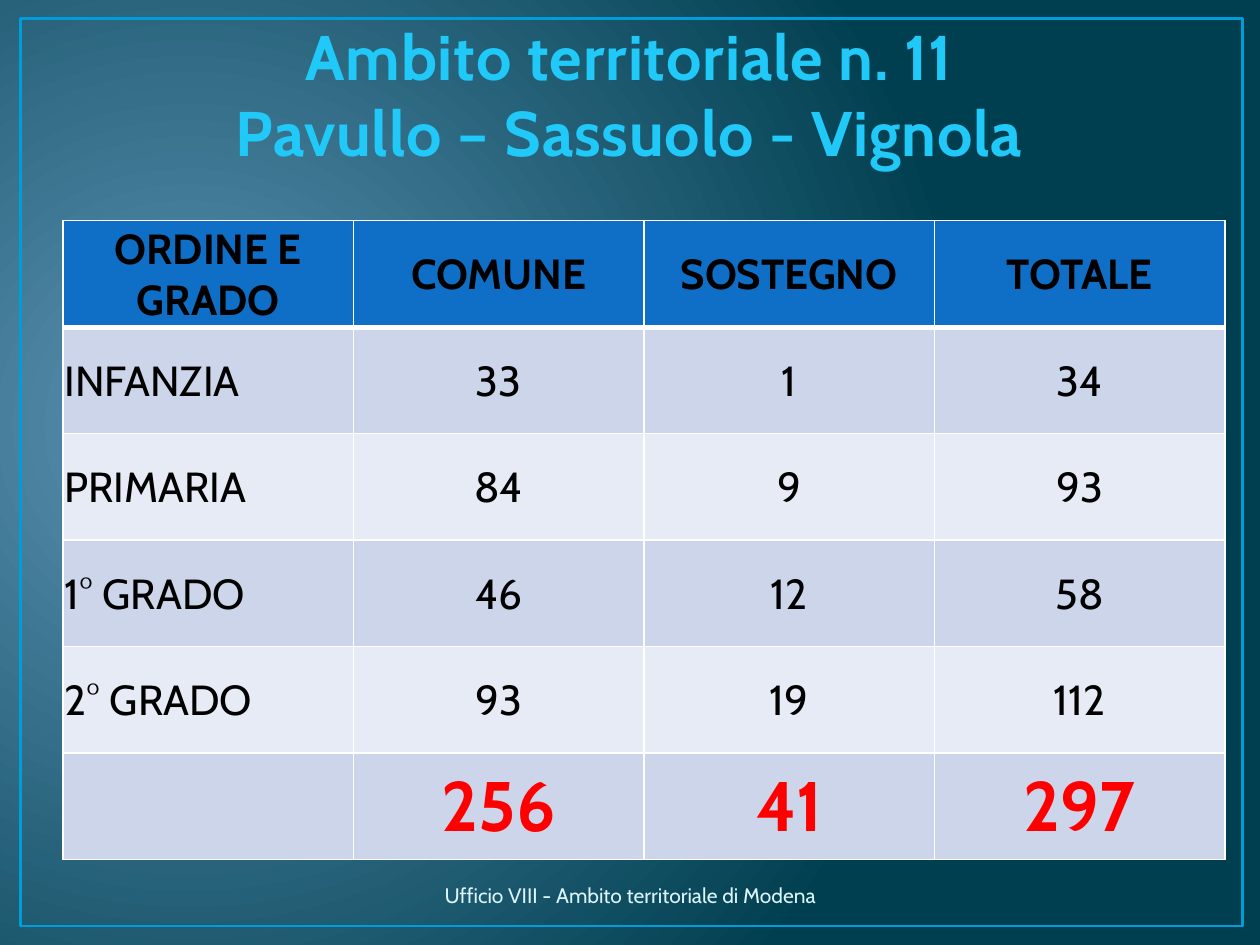
from lxml import etree
from pptx import Presentation
from pptx.dml.color import RGBColor
from pptx.enum import shapes, text
from pptx.oxml.ns import qn
from pptx.util import Cm, Pt

FONT = "Cabin"
BG_LIGHT = RGBColor(0x5C, 0x92, 0xB3)
BG_DARK = RGBColor(0x00, 0x3F, 0x50)
FRAME = RGBColor(0x00, 0x9D, 0xD9)
TITLE = RGBColor(0x20, 0xC9, 0xF8)
TITLE_EDGE = RGBColor(0x08, 0x37, 0x63)
HEADER = RGBColor(0x0F, 0x6F, 0xC6)
BAND_DARK = RGBColor(0xCC, 0xD5, 0xEA)
BAND_LIGHT = RGBColor(0xE7, 0xEB, 0xF5)
FOOTER = RGBColor(0xDB, 0xF5, 0xF9)
BLACK = RGBColor(0, 0, 0)
WHITE = RGBColor(0xFF, 0xFF, 0xFF)
RED = RGBColor(0xFF, 0, 0)

ROWS = [
    ["ORDINE E GRADO", "COMUNE", "SOSTEGNO", "TOTALE"],
    ["INFANZIA", "33", "1", "34"],
    ["PRIMARIA", "84", "9", "93"],
    ["1° GRADO", "46", "12", "58"],
    ["2° GRADO", "93", "19", "112"],
    ["", "256", "41", "297"],
]


def add_run(p, content, size, color, bold=False):
    r = p.add_run()
    r.text = content
    r.font.name = FONT
    r.font.size = Pt(size)
    r.font.bold = bold
    r.font.color.rgb = color
    return r


def make_line(tag, color, width):
    ln = etree.Element(qn(tag), w=str(Pt(width)))
    fill = etree.SubElement(ln, qn("a:solidFill"))
    etree.SubElement(fill, qn("a:srgbClr"), val=str(color))
    return ln


def set_background(s):
    fill = s.background.fill
    fill.gradient()
    for stop, color, position in zip(fill.gradient_stops, (BG_LIGHT, BG_DARK), (0, 1)):
        stop.color.rgb = color
        stop.position = position
    # Circular gradient instead of the linear one
    lin = next(s.background._cSld.iter(qn("a:lin")))
    circle = etree.Element(qn("a:path"), path="circle")
    etree.SubElement(circle, qn("a:fillToRect"), l="15000", t="50000", r="85000", b="60000")
    lin.getparent().replace(lin, circle)


def add_frame(s):
    sp = s.shapes.add_shape(shapes.MSO_SHAPE.RECTANGLE, Cm(0.41), Cm(0.38), Cm(24.64), Cm(18.29))
    sp.shadow.inherit = False
    sp.fill.background()
    sp.line.color.rgb = FRAME
    sp.line.width = Pt(1.5)


def add_title(s, lines):
    sp = s.shapes.title
    sp.left, sp.top, sp.width, sp.height = Cm(1.27), Cm(0.33), Cm(22.86), Cm(3.2)
    tf = sp.text_frame
    tf.auto_size = text.MSO_AUTO_SIZE.NONE
    tf.vertical_anchor = text.MSO_ANCHOR.BOTTOM
    p = tf.paragraphs[0]
    p.alignment = text.PP_ALIGN.CENTER
    for i, line in enumerate(lines):
        if i:
            p.add_line_break()
        r = add_run(p, line, 36, TITLE, True)
        props = r.font._element
        props.set("spc", "50")
        props.insert(0, make_line("a:ln", TITLE_EDGE, 1.05))
    # Title stays in front of the frame
    s.shapes._spTree.append(sp._element)


def style_cell(cell, content, fill, size, color, bold, align, top, bottom):
    cell.fill.solid()
    cell.fill.fore_color.rgb = fill
    cell.margin_left = cell.margin_right = cell.margin_top = Cm(0.03)
    cell.margin_bottom = 0
    cell.vertical_anchor = text.MSO_ANCHOR.MIDDLE
    p = cell.text_frame.paragraphs[0]
    p.alignment = align
    if content:
        add_run(p, content, size, color, bold)
    borders = (("a:lnL", 1), ("a:lnR", 1), ("a:lnT", top), ("a:lnB", bottom))
    for i, (tag, width) in enumerate(borders):
        cell._tc.tcPr.insert(i, make_line(tag, WHITE, width))


def add_staff_table(s):
    height = Cm(12.88)
    last = len(ROWS) - 1
    table = s.shapes.add_table(len(ROWS), len(ROWS[0]), Cm(1.27), Cm(4.45),
                               Cm(23.42), height).table
    for i, values in enumerate(ROWS):
        table.rows[i].height = height // len(ROWS)
        fill = HEADER if i == 0 else BAND_DARK if i % 2 else BAND_LIGHT
        size, color = (40, RED) if i == last else (24, BLACK)
        for j, value in enumerate(values):
            is_label = j == 0 and i > 0
            align = text.PP_ALIGN.LEFT if is_label else text.PP_ALIGN.CENTER
            style_cell(table.cell(i, j), value, fill, size, color, i in (0, last), align,
                       top=3 if i == 1 else 1, bottom=3 if i == 0 else 1)


def add_footer(s, content):
    sp = s.shapes.add_textbox(Cm(7.87), Cm(17.53), Cm(9.68), Cm(1.02))
    tf = sp.text_frame
    tf.word_wrap = True
    tf.vertical_anchor = text.MSO_ANCHOR.MIDDLE
    p = tf.paragraphs[0]
    p.alignment = text.PP_ALIGN.CENTER
    add_run(p, content, 12, FOOTER)


def main():
    prs = Presentation()
    prs.slide_width, prs.slide_height = Cm(25.4), Cm(19.05)
    s = prs.slides.add_slide(prs.slide_layouts[5])
    set_background(s)
    add_frame(s)
    add_title(s, ["Ambito territoriale n. 11", "Pavullo – Sassuolo - Vignola"])
    add_staff_table(s)
    add_footer(s, "Ufficio VIII - Ambito territoriale di Modena")
    prs.save("out.pptx")


if __name__ == "__main__":
    main()
